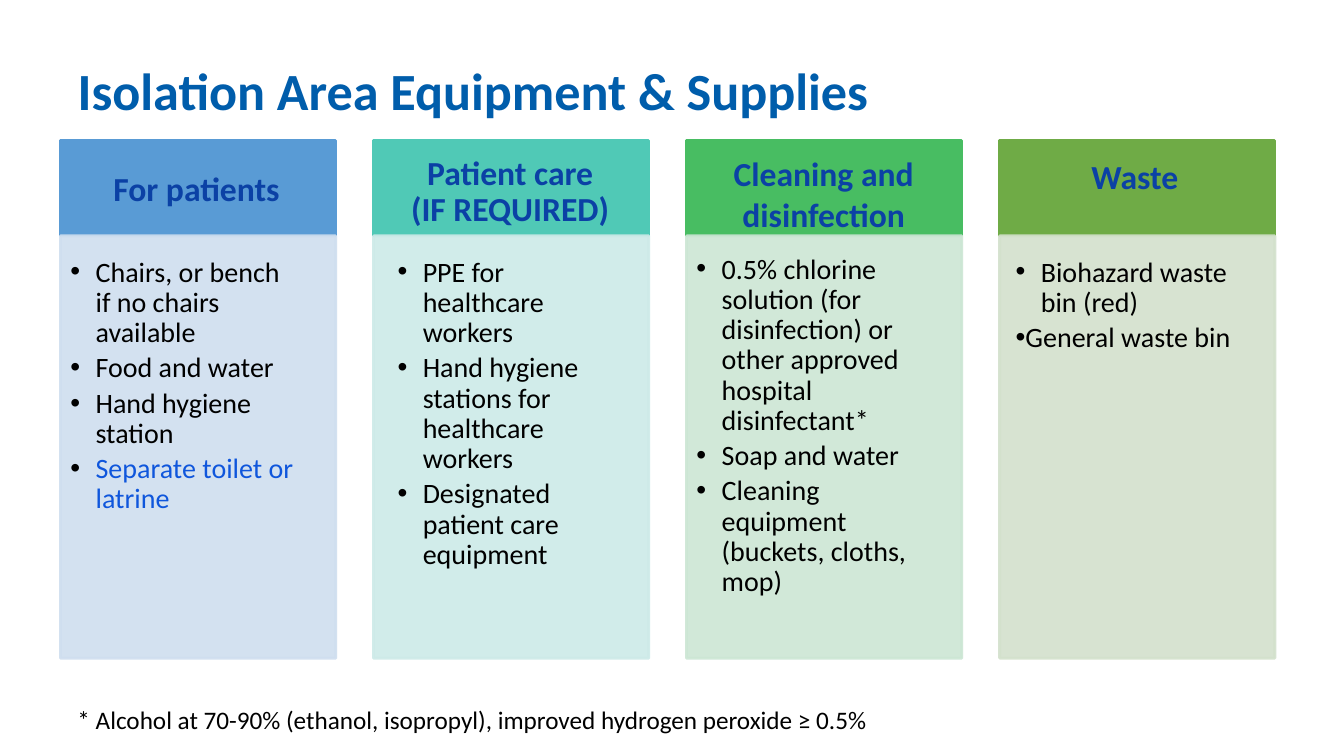
import pptx
import pptx.dml.color
import pptx.enum.shapes
import pptx.enum.text
import pptx.oxml.ns
import pptx.util
from lxml import etree

Inches = pptx.util.Inches
Pt = pptx.util.Pt
ALIGN = pptx.enum.text.PP_ALIGN
ANCHOR = pptx.enum.text.MSO_ANCHOR
AUTO = pptx.enum.text.MSO_AUTO_SIZE
qn = pptx.oxml.ns.qn

TITLE = {"name": "Calibri", "size": Pt(37.3), "bold": True}
HEADING = {"name": "Calibri", "size": Pt(24), "bold": True}
ITEM = {"name": "Calibri", "size": Pt(20)}
NOTE = {"name": "Calibri", "size": Pt(18)}
BLACK, NAVY, BLUE = "000000", "0B41A5", "0F56DC"

LEFT, TOP, PITCH = 0.6, 1.39, 3.105
WIDTH, HEAD_H, BODY_H = 2.73, 0.95, 4.19

# Each text box is x offset in its column, y, width, height
COLUMNS = [
    {"head": "599BD5", "body": "CFDEEF",
     "title": ["For patients"], "spacing": 0.9,
     "title_box": (0.18, 1.66, 2.34, 0.46), "list_box": (0, 2.51, 2.43, 3),
     "items": [("Chairs, or bench if no chairs available", BLACK, 0.25),
               ("Food and water", BLACK, 0.25),
               ("Hand hygiene station", BLACK, 0.25),
               ("Separate toilet or latrine", BLUE, 0.25)]},
    {"head": "50C9B6", "body": "CDEAE8",
     "title": ["Patient care", "(IF REQUIRED)"], "spacing": 0.9,
     "title_box": (0.14, 1.5, 2.43, 1.13), "list_box": (0.14, 2.51, 2.43, 3.6),
     "items": [("PPE for healthcare workers", BLACK, 0.25),
               ("Hand hygiene stations for healthcare workers", BLACK, 0.25),
               ("Designated patient care equipment", BLACK, 0.25)]},
    {"head": "48BD62", "body": "CCE6D4",
     "title": ["Cleaning and disinfection"], "spacing": 1.0,
     "title_box": (0.09, 1.47, 2.54, 1.21), "list_box": (0, 2.48, 2.54, 3.85),
     "items": [("0.5% chlorine solution (for disinfection) or other approved "
                "hospital disinfectant*", BLACK, 0.25),
               ("Soap and water", BLACK, 0.25),
               ("Cleaning equipment (buckets, cloths, mop)", BLACK, 0.25)]},
    {"head": "6FAB46", "body": "D3E1CC",
     "title": ["Waste"], "spacing": 1.0,
     "title_box": (0.15, 1.5, 2.38, 0.81), "list_box": (0.06, 2.51, 2.57, 1.37),
     "items": [("Biohazard waste bin (red)", BLACK, 0.25),
               ("General waste bin", BLACK, 0)]},
]


def rgb(value):
    return pptx.dml.color.RGBColor.from_string(value)


def put(obj, values):
    for name, value in values.items():
        setattr(obj, name, value)


def add_run(p, text, font, color):
    r = p.add_run()
    r.text = text
    put(r.font, font)
    r.font.color.rgb = rgb(color)


def add_textbox(slide, box):
    tf = slide.shapes.add_textbox(*map(Inches, box)).text_frame
    put(tf, {"word_wrap": True, "auto_size": AUTO.SHAPE_TO_FIT_TEXT})
    return tf


def add_paragraph(tf, index):
    return tf.paragraphs[0] if index == 0 else tf.add_paragraph()


def add_bullet(p, margin, color):
    pPr = p._p.get_or_add_pPr()
    pPr.set("marL", str(Inches(margin)))
    pPr.set("indent", str(Inches(-0.25)))
    bullet_color = etree.SubElement(pPr, qn("a:buClr"))
    etree.SubElement(bullet_color, qn("a:srgbClr"), val=color)
    etree.SubElement(pPr, qn("a:buFont"), typeface="Arial")
    etree.SubElement(pPr, qn("a:buChar"), char="•")


def add_panel(slide, box, color, opacity=100):
    sp = slide.shapes.add_shape(pptx.enum.shapes.MSO_SHAPE.RECTANGLE, *map(Inches, box))
    sp.shadow.inherit = False
    sp.fill.solid()
    sp.fill.fore_color.rgb = rgb(color)
    sp.line.color.rgb = rgb(color)
    sp.line.width = Pt(2)
    if opacity < 100:
        for clr in sp._element.spPr.iter(qn("a:srgbClr")):
            etree.SubElement(clr, qn("a:alpha"), val=str(opacity * 1000))


def add_title(slide, box, text):
    sp = slide.shapes.title
    put(sp, dict(zip(("left", "top", "width", "height"), map(Inches, box))))
    tf = sp.text_frame
    put(tf, {"word_wrap": True, "auto_size": AUTO.NONE, "vertical_anchor": ANCHOR.BOTTOM})
    p = tf.paragraphs[0]
    put(p, {"alignment": ALIGN.LEFT, "line_spacing": Pt(40)})
    add_run(p, text, TITLE, "005DAB")


def add_column(slide, box, column):
    x, y, w, h = box
    # Header and body panels
    add_panel(slide, (x, y, w, HEAD_H), column["head"])
    add_panel(slide, (x, y + HEAD_H, w, h - HEAD_H), column["body"], 90)

    # Heading
    dx, *rest = column["title_box"]
    tf = add_textbox(slide, (x + dx, *rest))
    for i, text in enumerate(column["title"]):
        p = add_paragraph(tf, i)
        put(p, {"alignment": ALIGN.CENTER, "line_spacing": column["spacing"]})
        add_run(p, text, HEADING, NAVY)

    # Bulleted list
    dx, *rest = column["list_box"]
    tf = add_textbox(slide, (x + dx, *rest))
    for i, (text, color, margin) in enumerate(column["items"]):
        p = add_paragraph(tf, i)
        put(p, {"level": 1, "line_spacing": 0.9, "space_before": Pt(3.6 if i else 0)})
        add_bullet(p, margin, BLACK)
        add_run(p, text, ITEM, color)


def add_footnote(slide, box, text):
    add_run(add_textbox(slide, box).paragraphs[0], text, NOTE, BLACK)


def main():
    prs = pptx.Presentation()
    put(prs, {"slide_width": Inches(13.33), "slide_height": Inches(7.5)})
    slide = prs.slides.add_slide(prs.slide_layouts[5])
    add_title(slide, (0.67, 0.3, 12, 0.95), "Isolation Area Equipment & Supplies")
    for i, column in enumerate(COLUMNS):
        add_column(slide, (LEFT + i * PITCH, TOP, WIDTH, HEAD_H + BODY_H), column)
    add_footnote(slide, (0.67, 6.94, 8.44, 0.4),
                 "* Alcohol at 70-90% (ethanol, isopropyl), improved hydrogen peroxide ≥ 0.5%")
    prs.save("out.pptx")


if __name__ == "__main__":
    main()
